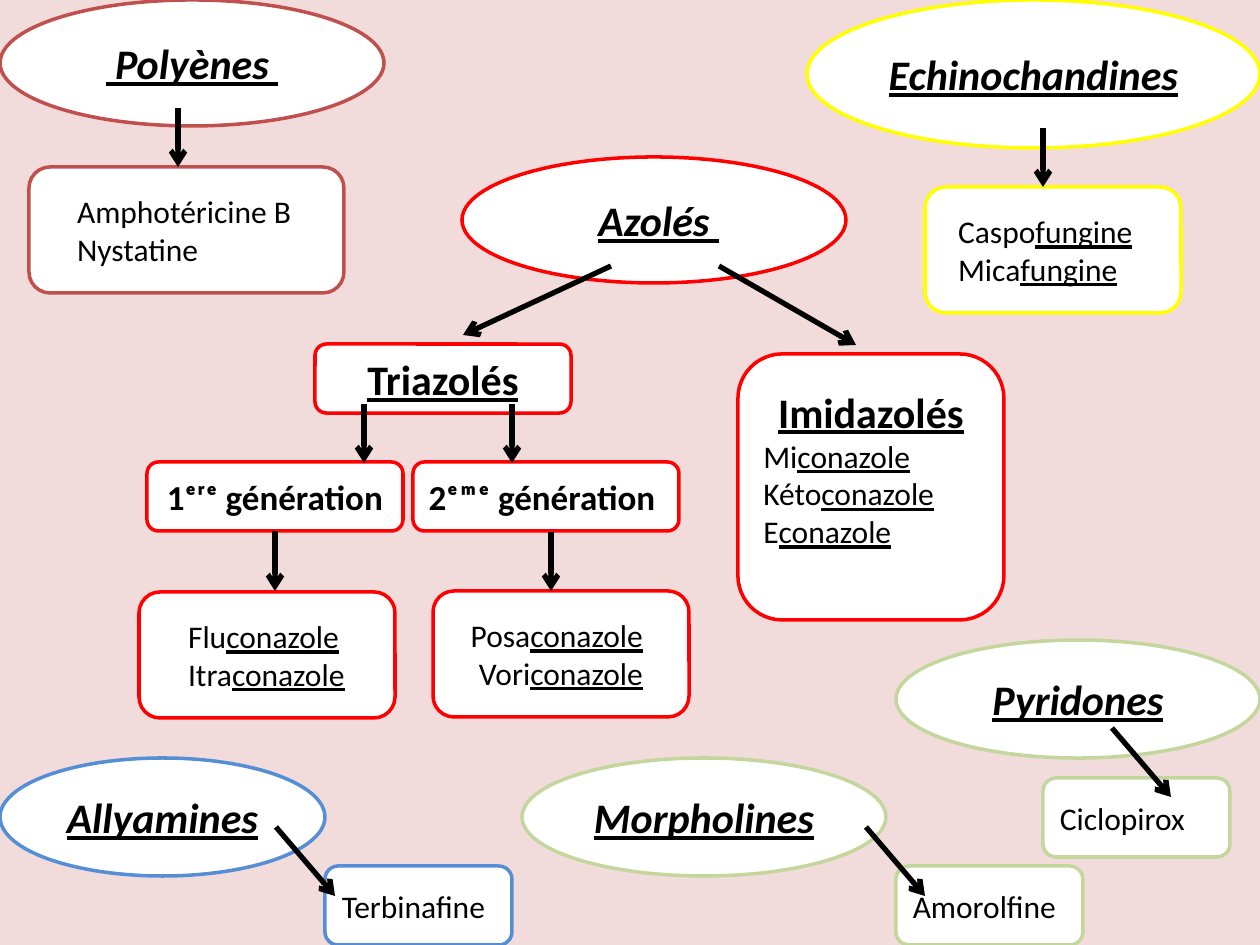
import pptx
import pptx.dml.color
import pptx.enum.shapes
import pptx.enum.text
import pptx.oxml
import pptx.oxml.ns
import pptx.util

SCALE = 914400 / 126  # EMU in one px
COLOURS = {
    "background": "F2DCDB", "white": "FFFFFF", "black": "000000",
    "polyene": "C0504D", "azole": "FF0000", "echinocandin": "FFFF00",
    "allylamine": "558ED5", "green": "C3D69B",
}
SHAPE = pptx.enum.shapes.MSO_SHAPE
ALIGN = pptx.enum.text.PP_ALIGN
LEFT, CENTRE, RIGHT = ALIGN.LEFT, ALIGN.CENTER, ALIGN.RIGHT
MARGIN = 13


def emu(px):
    return pptx.util.Emu(round(px * SCALE))


def colour(name):
    return pptx.dml.color.RGBColor.from_string(COLOURS[name])


class Diagram:
    """Holds the style and the page that is being drawn."""

    font = "Calibri"
    outline = pptx.util.Pt(2)
    arrow_width = pptx.util.Pt(3)

    def __init__(self, page):
        self.page = page
        page.background.fill.solid()
        page.background.fill.fore_color.rgb = colour("background")

    def frame(self, kind, place, line):
        shape = self.page.shapes.add_shape(kind, *map(emu, place))
        shape.shadow.inherit = False
        shape.fill.solid()
        shape.fill.fore_color.rgb = colour("white")
        shape.line.color.rgb = colour(line)
        shape.line.width = self.outline
        shape.text_frame.word_wrap = True
        shape.text_frame.vertical_anchor = pptx.enum.text.MSO_ANCHOR.MIDDLE
        return shape

    def set_text(self, para, text, size, align, bold=False, italic=False):
        """Fill a paragraph; the parts between underscores are underlined."""
        para.alignment = align
        for number, part in enumerate(text.split("_")):
            if part:
                span = para.add_run()
                span.text = part
                font = span.font
                font.name, font.size = self.font, pptx.util.Pt(size)
                font.bold, font.italic = bold, italic
                font.underline = number % 2 == 1
                font.color.rgb = colour("black")

    def family(self, place, text, line):
        shape = self.frame(SHAPE.OVAL, place, line)
        self.set_text(shape.text_frame.paragraphs[0], text, 24, CENTRE, True, True)

    def heading(self, place, text, line, size, align=CENTRE):
        box = self.frame(SHAPE.ROUNDED_RECTANGLE, place, line)
        self.set_text(box.text_frame.paragraphs[0], text, size, align, True)
        return box

    def drugs(self, place, names, line, margin=MARGIN, align=LEFT):
        box = self.frame(SHAPE.ROUNDED_RECTANGLE, place, line)
        frame = box.text_frame
        if align == RIGHT:
            frame.margin_right = emu(margin)
        else:
            frame.margin_left = emu(margin)
        frame.text = "\n" * (len(names) - 1)
        for para, name in zip(frame.paragraphs, names):
            self.set_text(para, name, 18, align)

    def titled_drugs(self, place, title, names, line, bottom):
        box = self.heading(place, title, line, 24)
        box.text_frame.margin_bottom = emu(bottom)
        for name in names:
            self.set_text(box.text_frame.add_paragraph(), name, 18, LEFT)

    def arrow(self, ends, source=None):
        straight = pptx.enum.shapes.MSO_CONNECTOR.STRAIGHT
        arrow = self.page.shapes.add_connector(straight, *map(emu, ends))
        if source is not None:
            arrow.begin_connect(source, 2)
        arrow.line.color.rgb = colour("black")
        arrow.line.width = self.arrow_width
        properties = arrow._element.spPr
        namespace = pptx.oxml.ns.nsdecls("a")
        properties.get_or_add_ln().append(
            pptx.oxml.parse_xml(f'<a:tailEnd {namespace} type="arrow"/>'))
        properties.append(pptx.oxml.parse_xml(f'<a:effectLst {namespace}/>'))


FAMILIES = [
    ((0, 0, 384, 126), "_ Polyènes _", "polyene"),
    ((462, 157, 384, 126), " _Azolés _", "azole"),
    ((807, 0, 453, 148), "_Echinochandines_", "echinocandin"),
    ((0, 758, 325, 118), "_Allyamines_", "allylamine"),
    ((522, 758, 364, 118), "_Morpholines_", "green"),
    ((896, 640, 364, 118), "_Pyridones_", "green"),
]
DRUGS = [
    ((29, 167, 315, 126), ["Amphotéricine B", "Nystatine"], "polyene", 42),
    ((925, 187, 256, 126), ["Caspo_fungine_", "Mica_fungine_"], "echinocandin", 27),
    ((433, 591, 256, 126), ["Posa_conazole_", "Vori_conazole_"], "azole", 40, RIGHT),
    ((139, 592, 256, 126), ["Flu_conazole_", "Itra_conazole_"], "azole", 43),
    ((325, 866, 187, 79), ["Terbinafine"], "allylamine"),
    ((1043, 778, 187, 79), ["Ciclopirox"], "green"),
    ((896, 866, 187, 79), ["Amorolfine"], "green"),
]
ARROWS = [
    (178, 108, 178, 167),    # Polyènes
    (611, 266, 463, 335),    # Azolés to Triazolés
    (719, 266, 856, 345),    # Azolés to Imidazolés
    (364, 404, 364, 463),    # Triazolés to first generation
    (512, 404, 512, 463),    # Triazolés to second generation
    (551, 532, 551, 591),    # second generation
    (1043, 128, 1043, 187),  # Echinochandines
    (276, 827, 335, 896),    # Allyamines
    (1112, 728, 1171, 797),  # Pyridones
    (866, 827, 925, 896),    # Morpholines
]


def main():
    deck = pptx.Presentation()
    deck.slide_width, deck.slide_height = emu(1260), emu(945)
    diagram = Diagram(deck.slides.add_slide(deck.slide_layouts[6]))

    for family in FAMILIES:
        diagram.family(*family)
    diagram.heading((315, 344, 256, 69), "_Triazolés_", "azole", 24)
    diagram.titled_drugs(
        (738, 354, 266, 266), "_Imidazolés_",
        ["Mi_conazole_", "Kéto_conazole_", "E_conazole_"], "azole", 44)
    diagram.heading((413, 462, 266, 69), "2ᵉᵐᵉ génération", "azole", 20, LEFT)
    first = diagram.heading((147, 462, 256, 69), "1ᵉʳᵉ génération", "azole", 20)
    for group in DRUGS:
        diagram.drugs(*group)
    for ends in ARROWS:
        diagram.arrow(ends)
    diagram.arrow((275, 531, 275, 591), first)
    deck.save("out.pptx")


if __name__ == "__main__":
    main()
